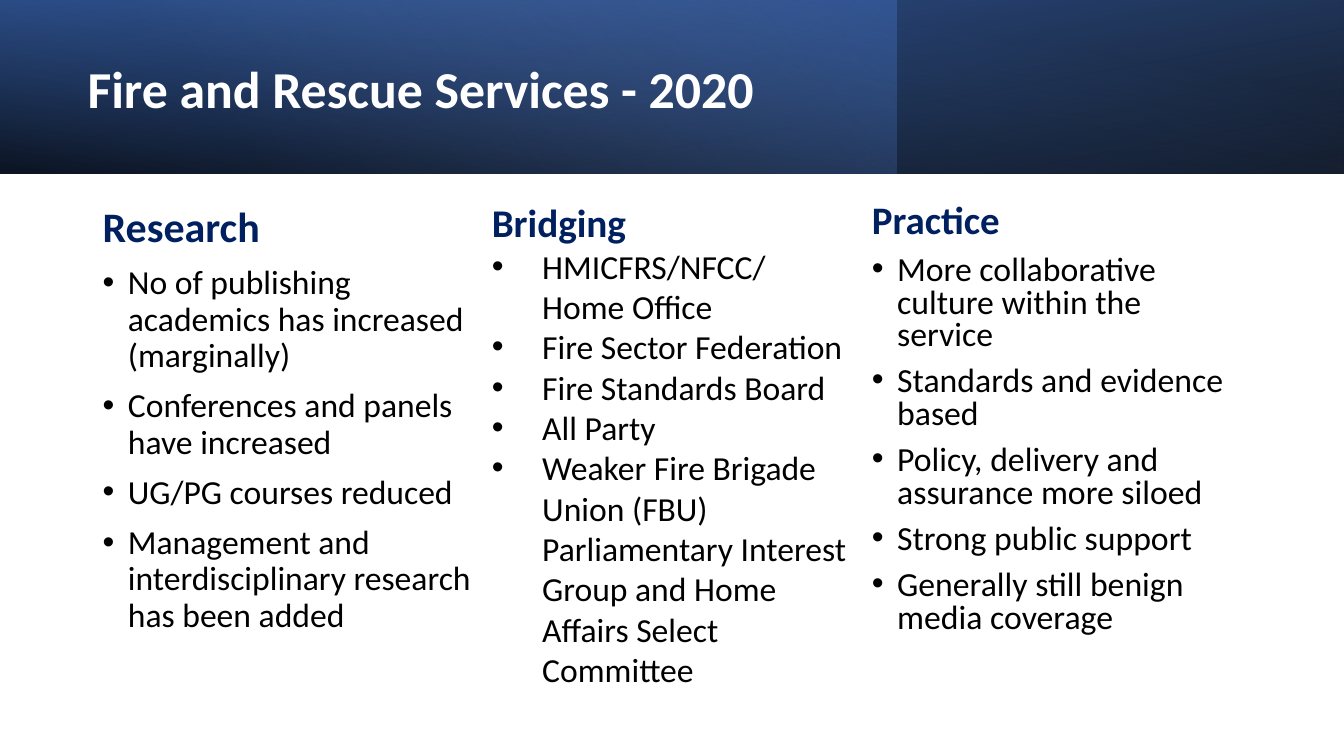
from lxml import etree
from pptx import Presentation
from pptx import util as u
from pptx.dml.color import RGBColor
from pptx.enum import shapes, text
from pptx.oxml.ns import qn

FONT = "Calibri"
COLOURS = {
    "black": "000000",
    "white": "FFFFFF",
    "navy": "002060",
    "deep": "2F5597",
    "blue": "4472C4",
    "pale": "8FAADC",
}
BANNER_LAYERS = [
    {"width": 13.33, "angle": 100, "turn": 180, "flip": True,
     "stops": [(0, "black", 96), (100, "deep", 100)]},
    {"width": 8.89, "angle": 140, "turn": 0, "flip": False,
     "stops": [(0, "blue", 41), (74, "pale", 0)]},
    {"width": 13.33, "angle": 260, "turn": 0, "flip": True,
     "stops": [(0, "black", 63), (78, "blue", 15)]},
]
COLUMNS = [
    {"box": (0.92, 2, 4.11, 4.76), "heading": "Research", "sizes": (30, 24),
     "line": 0.9, "before": 10, "indent": 0.25,
     "points": ["No of publishing academics has increased (marginally)",
                "Conferences and panels have increased",
                "UG/PG courses reduced",
                "Management and interdisciplinary research has been added"]},
    {"box": (4.78, 1.92, 3.77, 5.02), "heading": "Bridging", "sizes": (28, 24),
     "line": 1.0, "before": 0, "indent": 0.5,
     "points": ["HMICFRS/NFCC/ Home Office",
                "Fire Sector Federation",
                "Fire Standards Board",
                "All Party",
                "Weaker Fire Brigade Union (FBU) Parliamentary Interest "
                "Group and Home Affairs Select Committee"]},
    {"box": (8.55, 1.98, 3.86, 4.76), "heading": "Practice", "sizes": (27.8, 24.1),
     "line": 0.8, "before": 10, "indent": 0.25,
     "points": ["More collaborative culture within the service",
                "Standards and evidence based",
                "Policy, delivery and assurance more siloed",
                "Strong public support",
                "Generally still benign media coverage"]},
]


def fill_gradient(shape, stops, angle):
    """Give a shape a linear gradient of (position, colour, opacity) stops."""
    shape.fill.background()
    empty = shape._element.spPr.find(qn("a:noFill"))
    gradient = etree.Element(qn("a:gradFill"), rotWithShape="1")
    stop_list = etree.SubElement(gradient, qn("a:gsLst"))
    for position, colour, opacity in stops:
        stop = etree.SubElement(stop_list, qn("a:gs"), pos=str(position * 1000))
        tint = etree.SubElement(stop, qn("a:srgbClr"), val=COLOURS[colour])
        etree.SubElement(tint, qn("a:alpha"), val=str(opacity * 1000))
    etree.SubElement(gradient, qn("a:lin"), ang=str(angle * 60000), scaled="0")
    empty.getparent().replace(empty, gradient)


def add_text_frame(page, box):
    """Add a wrapping text box and return its frame."""
    frame = page.shapes.add_textbox(*map(u.Inches, box)).text_frame
    frame.word_wrap = True
    return frame


def add_span(para, words, size, colour, bold=False):
    """Add one formatted run to a paragraph."""
    span = para.add_run()
    span.text = words
    span.font.name = FONT
    span.font.size = u.Pt(size)
    span.font.bold = bold
    span.font.color.rgb = RGBColor.from_string(COLOURS[colour])


def set_bullet(para, indent):
    """Give a paragraph a round bullet with a hanging indent."""
    properties = para._p.get_or_add_pPr()
    properties.set("marL", str(u.Inches(indent)))
    properties.set("indent", str(-u.Inches(indent)))
    etree.SubElement(properties, qn("a:buFont"), typeface="Arial")
    etree.SubElement(properties, qn("a:buChar"), char="•")


def add_banner(page, box):
    """Stack the gradient layers in the box and set the title on them."""
    left, top, width, height = box
    for layer in BANNER_LAYERS:
        area = map(u.Inches, (left, top, layer["width"], height))
        band = page.shapes.add_shape(shapes.MSO_SHAPE.RECTANGLE, *area)
        band.shadow.inherit = False
        band.line.fill.background()
        band.rotation = layer["turn"]
        if layer["flip"]:
            band._element.spPr.find(qn("a:xfrm")).set("flipH", "1")
        fill_gradient(band, layer["stops"], layer["angle"])
    frame = add_text_frame(page, (left + 0.77, top + 0.27, 7.72, 1.27))
    frame.vertical_anchor = text.MSO_ANCHOR.MIDDLE
    para = frame.paragraphs[0]
    para.line_spacing = 0.9
    add_span(para, "Fire and Rescue Services - 2020", 37, "white", True)


def add_column(page, box, heading, sizes, line, before, indent, points):
    """Write a heading and its bulleted points in the box."""
    frame = add_text_frame(page, box)
    heading_size, point_size = sizes
    add_span(frame.paragraphs[0], heading, heading_size, "navy", True)
    for point in points:
        para = frame.add_paragraph()
        add_span(para, point, point_size, "black")
    for para in frame.paragraphs:
        para.line_spacing = line
        para.space_before = u.Pt(before)
    for para in frame.paragraphs[1:]:
        set_bullet(para, indent)


def main():
    """Build the slide and save the deck."""
    deck = Presentation()
    deck.slide_width, deck.slide_height = u.Inches(13.33), u.Inches(7.5)
    page = deck.slides.add_slide(deck.slide_layouts[6])
    add_banner(page, (0, 0, 13.33, 1.72))
    for column in COLUMNS:
        add_column(page, **column)
    deck.save("out.pptx")


if __name__ == "__main__":
    main()
